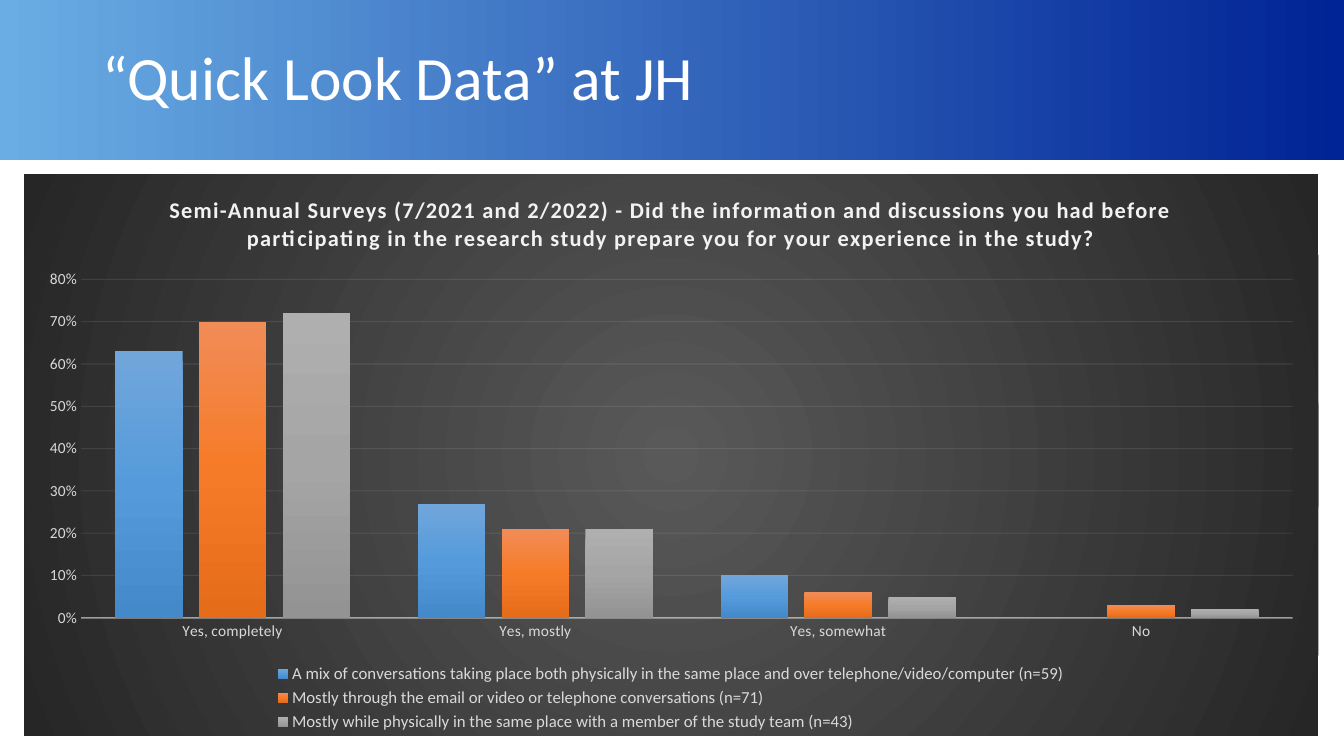
from dataclasses import dataclass

from lxml import etree
from pptx import Presentation
from pptx.chart.data import CategoryChartData
from pptx.dml.color import RGBColor
from pptx.enum.chart import XL_CHART_TYPE, XL_LEGEND_POSITION, XL_TICK_MARK
from pptx.enum.shapes import MSO_SHAPE
from pptx.enum.text import MSO_ANCHOR, PP_ALIGN
from pptx.oxml import parse_xml
from pptx.oxml.ns import nsdecls, qn
from pptx.util import Pt

CLUSTERED = XL_CHART_TYPE.COLUMN_CLUSTERED
BOTTOM = XL_LEGEND_POSITION.BOTTOM
NO_TICK = XL_TICK_MARK.NONE
RECTANGLE = MSO_SHAPE.RECTANGLE
MIDDLE = MSO_ANCHOR.MIDDLE
LEFT = PP_ALIGN.LEFT

HEADING = "“Quick Look Data” at JH"
QUESTION = (
    "Semi-Annual Surveys (7/2021 and 2/2022) - Did the information and discussions "
    "you had before participating in the research study prepare you for your "
    "experience in the study?"
)
ANSWERS = ["Yes, completely", "Yes, mostly", "Yes, somewhat", "No"]
GROUPS = [
    ("A mix of conversations taking place both physically in the same place "
     "and over telephone/video/computer (n=59)", (0.63, 0.27, 0.10, 0)),
    ("Mostly through the email or video or telephone conversations (n=71)",
     (0.70, 0.21, 0.06, 0.03)),
    ("Mostly while physically in the same place with a member of the study team (n=43)",
     (0.72, 0.21, 0.05, 0.02)),
]

SLIDE_SIZE = (960, 540)
BAND_BOX = (0, 0, 960, 114)
HEADING_BOX = (66, 5, 828, 104.4)
CHART_BOX = (17.3, 124.6, 924.5, 401)
PLOT_LAYOUT = {"x": 0.044, "y": 0.187, "w": 0.936, "h": 0.603}


@dataclass(frozen=True)
class Theme:
    font: str = "Calibri"
    heading: str = "FFFFFF"
    question: str = "F2F2F2"
    label: str = "D9D9D9"
    rule: str = "F2F2F2"
    band: tuple = ("6AADE4", "002395")
    backdrop: tuple = ("595959", "262626")
    columns: tuple = (
        ("71A6DB", "559BDB", "448ACA"),
        ("F18C57", "F67B28", "E56C19"),
        ("AFAFAF", "A5A5A5", "939393"),
    )
    heading_size: int = 44
    question_size: int = 16
    legend_size: int = 12
    axis_size: int = 11


THEME = Theme()


def points(values):
    return [Pt(value) for value in values]


def style_font(font, size, color):
    font.name = THEME.font
    font.size = Pt(size)
    font.color.rgb = RGBColor.from_string(color)


def gradient(colors, direction):
    last = len(colors) - 1
    stops = "".join(
        f'<a:gs pos="{100000 * i // last}"><a:srgbClr val="{color}"/></a:gs>'
        for i, color in enumerate(colors)
    )
    return parse_xml(
        f'<a:gradFill {nsdecls("a")} rotWithShape="1">'
        f"<a:gsLst>{stops}</a:gsLst>{direction}</a:gradFill>"
    )


def linear_fill(fill, properties, colors, degrees):
    fill.background()
    direction = f'<a:lin ang="{degrees * 60000}" scaled="0"/>'
    properties.replace(properties.find(qn("a:noFill")), gradient(colors, direction))


def style_rule(line, width, opacity):
    line.width = Pt(width)
    line.color.rgb = RGBColor.from_string(THEME.rule)
    color = line.fill._xPr.find(".//" + qn("a:srgbClr"))
    etree.SubElement(color, qn("a:alpha")).set("val", str(opacity * 1000))


def add_heading(slide):
    band = slide.shapes.add_shape(RECTANGLE, *points(BAND_BOX))
    band.shadow.inherit = False
    linear_fill(band.fill, band.element.spPr, THEME.band, 0)
    band.line.fill.background()

    heading = slide.shapes.title
    heading.left, heading.top, heading.width, heading.height = points(HEADING_BOX)
    slide.shapes.element.append(heading.element)
    frame = heading.text_frame
    frame.word_wrap = True
    frame.vertical_anchor = MIDDLE
    paragraph = frame.paragraphs[0]
    paragraph.alignment = LEFT
    paragraph.line_spacing = 0.9
    run = paragraph.add_run()
    run.text = HEADING
    style_font(run.font, THEME.heading_size, THEME.heading)


def style_backdrop(chart):
    backdrop = parse_xml(f'<c:spPr {nsdecls("c", "a")}><a:ln><a:noFill/></a:ln></c:spPr>')
    direction = (
        '<a:path path="circle">'
        '<a:fillToRect l="50000" t="50000" r="50000" b="50000"/></a:path>'
    )
    backdrop.insert(0, gradient(THEME.backdrop, direction))
    chart.element.find(qn("c:txPr")).addprevious(backdrop)


def place_plot(chart):
    area = chart.element.find(".//" + qn("c:plotArea"))
    old = area.find(qn("c:layout"))
    if old is not None:
        area.remove(old)
    sizes = "".join(f'<c:{key} val="{value}"/>' for key, value in PLOT_LAYOUT.items())
    area.insert(0, parse_xml(
        f'<c:layout {nsdecls("c")}><c:manualLayout><c:layoutTarget val="inner"/>'
        f'<c:xMode val="edge"/><c:yMode val="edge"/>{sizes}</c:manualLayout></c:layout>'
    ))


def add_survey(slide):
    survey = CategoryChartData(number_format="0%")
    survey.categories = ANSWERS
    for name, shares in GROUPS:
        survey.add_series(name, shares)
    chart = slide.shapes.add_chart(CLUSTERED, *points(CHART_BOX), survey).chart
    style_font(chart.font, THEME.axis_size, THEME.label)
    style_backdrop(chart)
    place_plot(chart)

    run = chart.chart_title.text_frame.paragraphs[0].add_run()
    run.text = QUESTION
    style_font(run.font, THEME.question_size, THEME.question)
    run.font.bold = True
    run._r.get_or_add_rPr().set("spc", "100")
    chart.chart_title.include_in_layout = False

    chart.has_legend = True
    chart.legend.position = BOTTOM
    chart.legend.include_in_layout = False
    style_font(chart.legend.font, THEME.legend_size, THEME.label)

    answers, shares = chart.category_axis, chart.value_axis
    for axis in (answers, shares):
        axis.major_tick_mark = axis.minor_tick_mark = NO_TICK
        style_font(axis.tick_labels.font, THEME.axis_size, THEME.label)
    style_rule(answers.format.line, 1, 54)
    shares.minimum_scale, shares.maximum_scale, shares.major_unit = 0, 0.8, 0.1
    shares.tick_labels.number_format = "0%"
    shares.tick_labels.number_format_is_linked = False
    shares.format.line.fill.background()
    style_rule(shares.major_gridlines.format.line, 0.75, 10)

    plot = chart.plots[0]
    plot.vary_by_categories = False
    plot.gap_width = 100
    plot.overlap = -24
    for group, colors in zip(plot.series, THEME.columns):
        group.invert_if_negative = False
        fill = group.format.fill
        linear_fill(fill, group._element.find(qn("c:spPr")), colors, 90)


def main():
    deck = Presentation()
    deck.slide_width, deck.slide_height = points(SLIDE_SIZE)
    slide = deck.slides.add_slide(deck.slide_layouts[5])
    add_heading(slide)
    add_survey(slide)
    deck.save("out.pptx")


if __name__ == "__main__":
    main()
